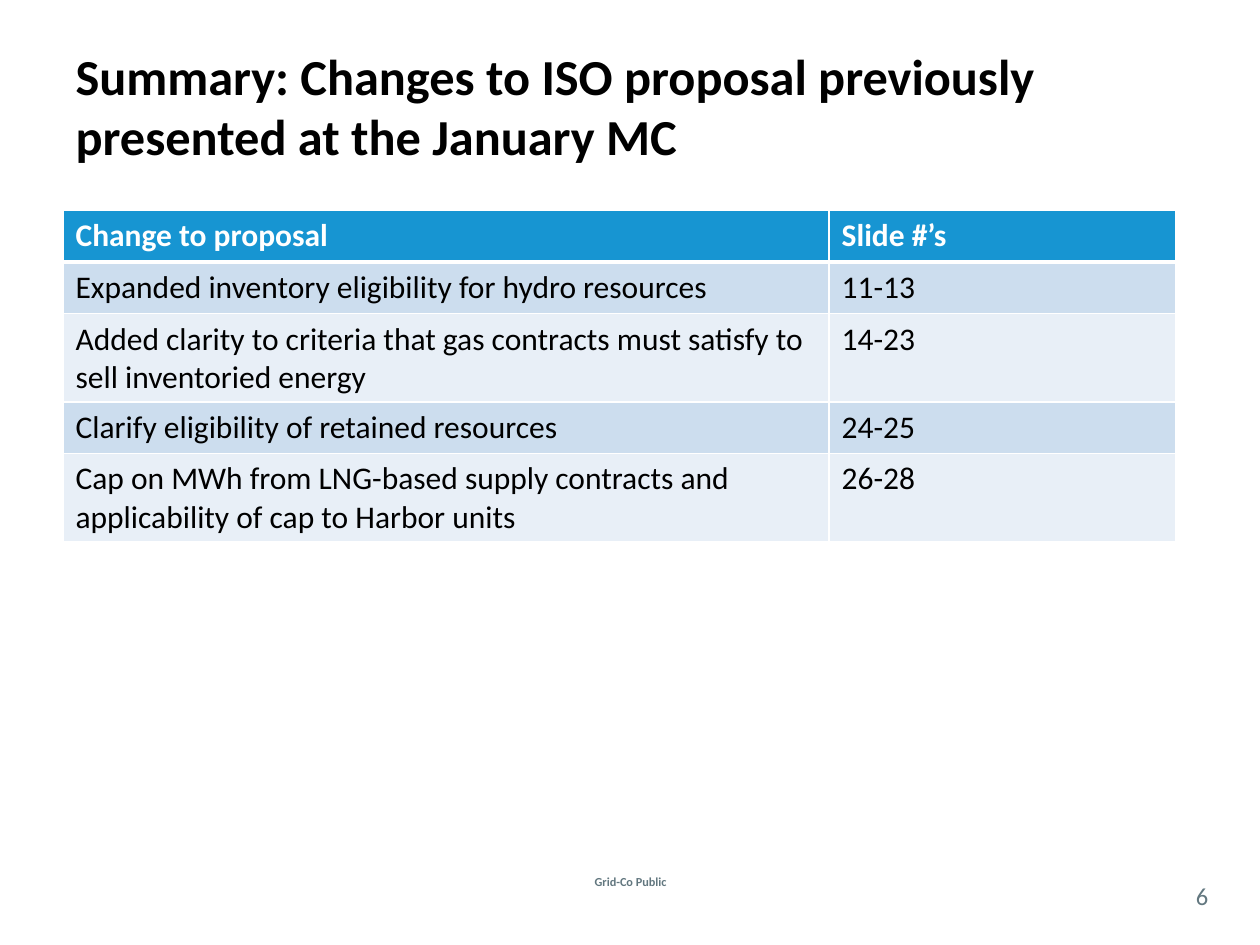
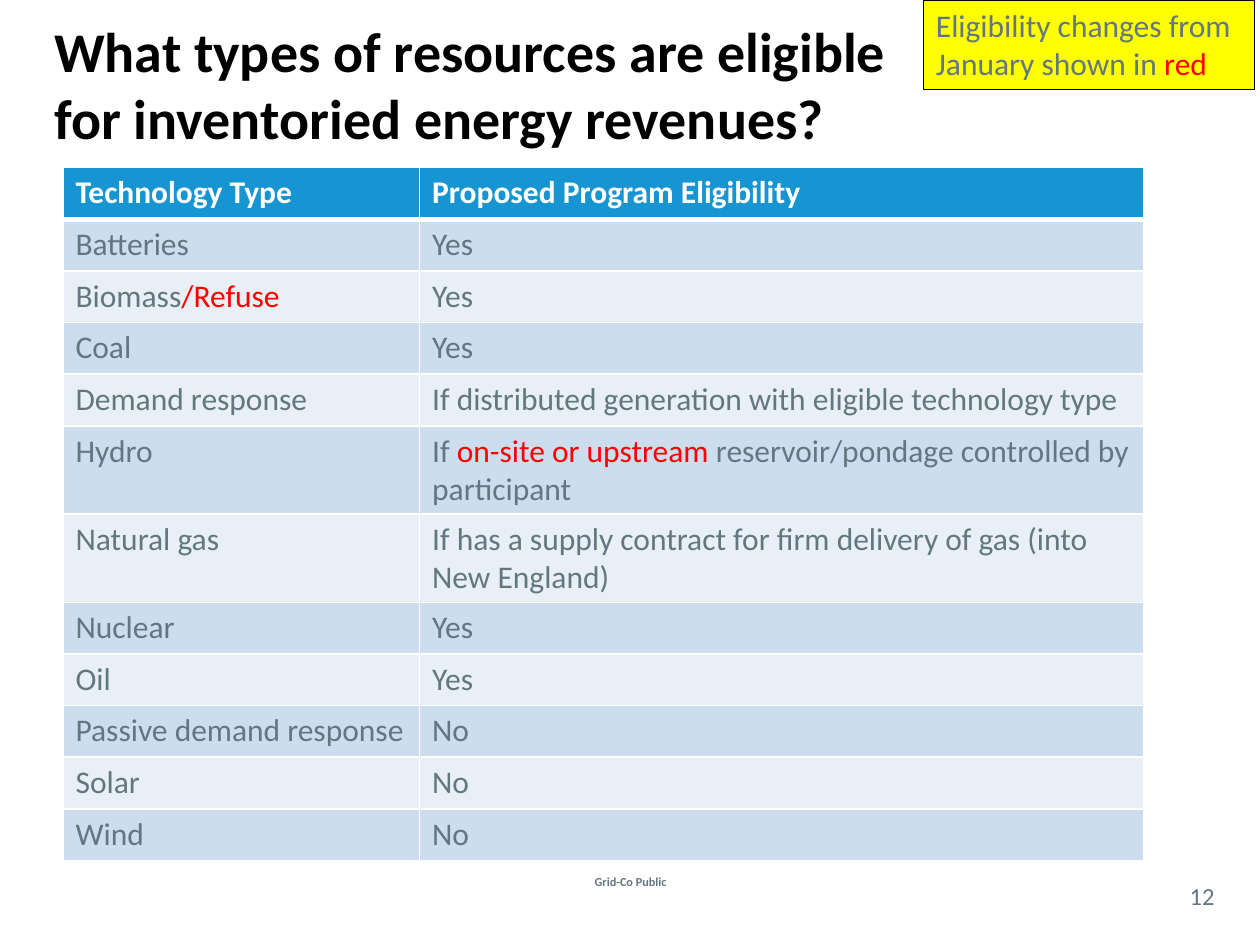
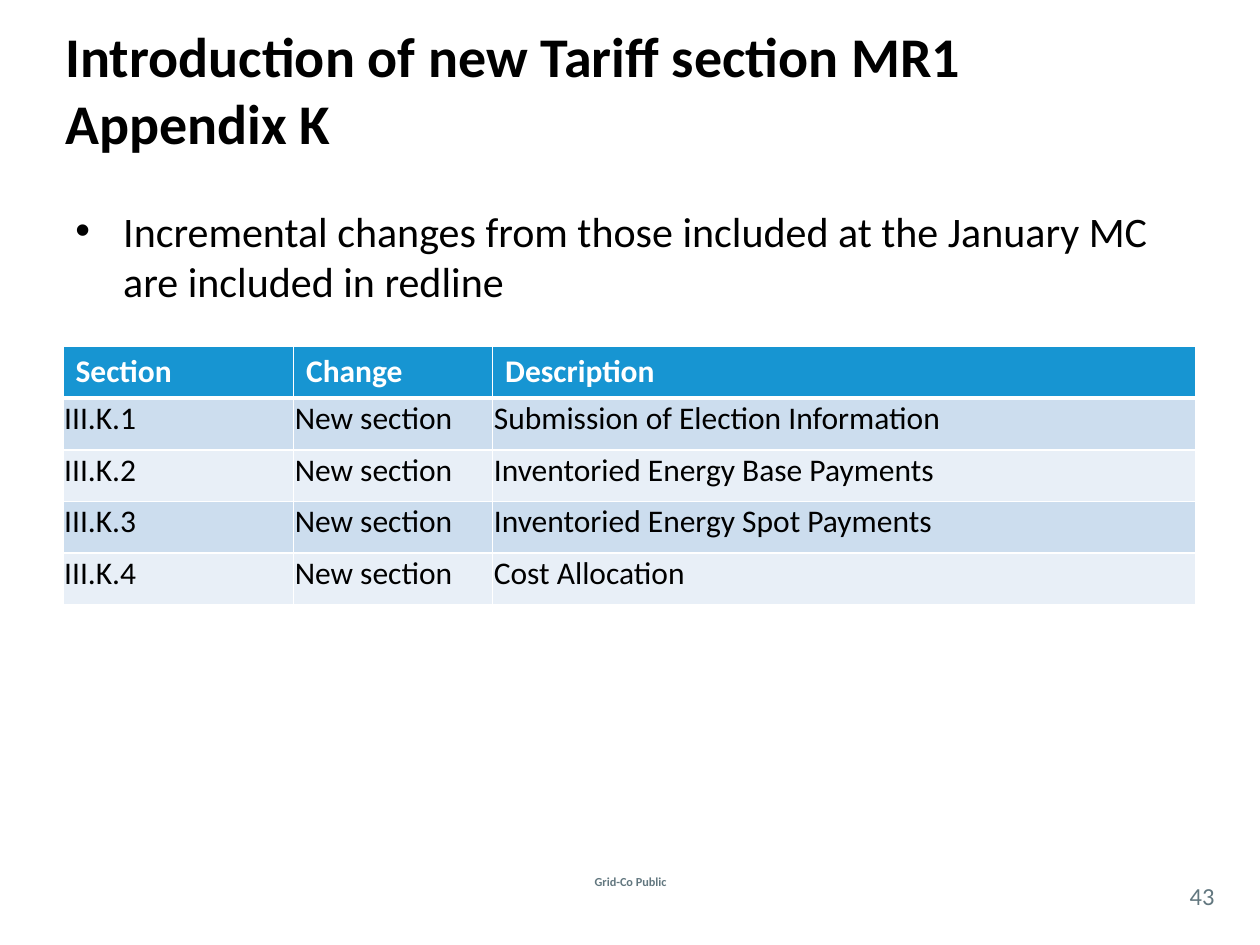
from pptx import Presentation
from pptx.dml.color import RGBColor
from pptx.enum.shapes import MSO_SHAPE
from pptx.enum.text import MSO_ANCHOR, MSO_AUTO_SIZE, PP_ALIGN
from pptx.oxml.ns import qn
from pptx.util import Inches, Pt
from lxml.etree import SubElement

COLORS = {
    "black": "000000",
    "white": "FFFFFF",
    "slate": "62777F",
    "red": "FF0000",
    "yellow": "FFFF00",
    "header": "1795D2",
    "odd": "CCDDEE",
    "even": "E8EFF7",
}
FONT = "Calibri"
FOOTER = "Grid-Co Public"
ROW_HEIGHT = 0.41

PROPOSAL_CHANGES = [
    ["Change to proposal", "Slide #’s"],
    ["Expanded inventory eligibility for hydro resources", "11-13"],
    ["Added clarity to criteria that gas contracts must satisfy to sell inventoried energy", "14-23"],
    ["Clarify eligibility of retained resources", "24-25"],
    ["Cap on MWh from LNG-based supply contracts and applicability of cap to Harbor units", "26-28"],
]
ELIGIBILITY = [
    ["Technology Type", "Proposed Program Eligibility"],
    ["Batteries", "Yes"],
    [["Biomass", ("/Refuse", "red")], "Yes"],
    ["Coal", "Yes"],
    ["Demand response", "If distributed generation with eligible technology type"],
    ["Hydro", ["If ", ("on-site or upstream ", "red"), "reservoir/pondage controlled by participant"]],
    ["Natural gas", "If has a supply contract for firm delivery of gas (into New England)"],
    ["Nuclear", "Yes"],
    ["Oil", "Yes"],
    ["Passive demand response", "No"],
    ["Solar", "No"],
    ["Wind", "No"],
]
TARIFF_SECTIONS = [
    ["Section", "Change", "Description"],
    ["III.K.1", "New section", "Submission of Election Information"],
    ["III.K.2", "New section", "Inventoried Energy Base Payments"],
    ["III.K.3", "New section", "Inventoried Energy Spot Payments"],
    ["III.K.4", "New section", "Cost Allocation"],
]


def rgb(name):
    """Return the named colour."""
    return RGBColor.from_string(COLORS[name])


def write_runs(paragraph, content, size, color, bold=False):
    """Add runs from a string or a list of strings and (text, colour) pairs."""
    for part in [content] if isinstance(content, str) else content:
        text, run_color = (part, color) if isinstance(part, str) else part
        run = paragraph.add_run()
        run.text = text
        run.font.name = FONT
        run.font.size = Pt(size)
        run.font.bold = bold
        run.font.color.rgb = rgb(run_color)


def add_title(slide, box, lines, size):
    """Place the title and write its lines."""
    title = slide.shapes.title
    title.left, title.top, title.width, title.height = map(Inches, box)
    frame = title.text_frame
    frame.word_wrap = True
    frame.auto_size = MSO_AUTO_SIZE.NONE
    frame.vertical_anchor = MSO_ANCHOR.MIDDLE
    heading = frame.paragraphs[0]
    heading.alignment = PP_ALIGN.LEFT
    for index, line in enumerate(lines):
        if index:
            heading.add_line_break()
        write_runs(heading, line, size, "black", True)


def add_text(slide, box, content, size, color, bold=False, anchor=MSO_ANCHOR.MIDDLE):
    """Add a wrapping text box and return its text frame."""
    frame = slide.shapes.add_textbox(*map(Inches, box)).text_frame
    frame.word_wrap = True
    frame.vertical_anchor = anchor
    write_runs(frame.paragraphs[0], content, size, color, bold)
    return frame


def add_footer(slide, number):
    """Add the classification line and the slide number."""
    label = add_text(slide, (4.27, 6.89, 1.47, 0.22), FOOTER, 7, "slate", True)
    page = add_text(slide, (9.33, 6.96, 0.42, 0.29), str(number), 14, "slate")
    page.margin_left = page.margin_right = page.margin_top = page.margin_bottom = 0
    for frame in (label, page):
        frame.paragraphs[0].alignment = PP_ALIGN.CENTER


def set_borders(cell, top, bottom):
    """Draw white cell borders, with given top and bottom widths in points."""
    properties = cell._tc.get_or_add_tcPr()
    for side, width in (("L", 1), ("R", 1), ("T", top), ("B", bottom)):
        border = SubElement(properties, qn(f"a:ln{side}"), w=str(Pt(width)))
        fill = SubElement(border, qn("a:solidFill"))
        SubElement(fill, qn("a:srgbClr"), val=COLORS["white"])


def add_grid(slide, left, top, widths, rows, color, tight=False):
    """Add a banded table with a blue header row."""
    grid = slide.shapes.add_table(
        len(rows), len(widths), Inches(left), Inches(top),
        Inches(sum(widths)), Inches(ROW_HEIGHT * len(rows))).table
    for column, width in zip(grid.columns, widths):
        column.width = Inches(width)
    for r, row in enumerate(rows):
        grid.rows[r].height = Inches(ROW_HEIGHT)
        header = r == 0
        band = "header" if header else "odd" if r % 2 else "even"
        for c, content in enumerate(row):
            cell = grid.cell(r, c)
            set_borders(cell, 3 if r == 1 else 1, 3 if header else 1)
            cell.fill.solid()
            cell.fill.fore_color.rgb = rgb(band)
            if tight and not header:
                cell.margin_left = cell.margin_right = cell.margin_top = Inches(0.01)
                cell.margin_bottom = 0
            write_runs(cell.text_frame.paragraphs[0], content, 18,
                       "white" if header else color, header)


def add_change_note(slide, box):
    """Add the yellow note explaining the red wording."""
    note = slide.shapes.add_shape(MSO_SHAPE.RECTANGLE, *map(Inches, box))
    note.shadow.inherit = False
    note.fill.solid()
    note.fill.fore_color.rgb = rgb("yellow")
    note.line.color.rgb = rgb("black")
    note.line.width = Pt(0.75)
    frame = note.text_frame
    frame.word_wrap = True
    frame.vertical_anchor = MSO_ANCHOR.TOP
    message = frame.paragraphs[0]
    message.alignment = PP_ALIGN.LEFT
    write_runs(message, ["Eligibility changes from January shown in ", ("red", "red")], 18, "slate")


def add_bullet(slide, box, content):
    """Add one bulleted statement with a hanging indent."""
    frame = add_text(slide, box, content, 24, "black", anchor=MSO_ANCHOR.TOP)
    properties = frame.paragraphs[0]._p.get_or_add_pPr()
    properties.set("marL", str(Inches(0.38)))
    properties.set("indent", str(-Inches(0.38)))
    SubElement(properties, qn("a:buFont"), typeface="Arial")
    SubElement(properties, qn("a:buChar"), char="•")


def start_slide(deck, number, title_box, title_lines, title_size):
    """Add a slide with its footer and title."""
    slide = deck.slides.add_slide(deck.slide_layouts[5])
    add_footer(slide, number)
    add_title(slide, title_box, title_lines, title_size)
    return slide


def build_summary(deck):
    """Build the summary of proposal changes."""
    slide = start_slide(deck, 6, (0.5, 0.42, 9, 0.83), [
        "Summary: Changes to ISO proposal previously presented at the January MC"], 28.8)
    add_grid(slide, 0.5, 1.67, (6.08, 2.75), PROPOSAL_CHANGES, "black")


def build_eligibility(deck):
    """Build the eligibility overview by technology."""
    slide = start_slide(deck, 12, (0.33, 0.08, 9.33, 1.17), [
        "What types of resources are eligible", "for inventoried energy revenues?"], 32)
    add_grid(slide, 0.5, 1.33, (2.83, 5.75), ELIGIBILITY, "slate")
    add_change_note(slide, (7.33, 0, 2.63, 0.71))


def build_tariff(deck):
    """Build the list of new tariff sections."""
    slide = start_slide(deck, 43, (0.42, 0.08, 9, 1.25), [
        "Introduction of new Tariff section MR1 Appendix K"], 32)
    add_grid(slide, 0.5, 2.75, (1.83, 1.58, 5.58), TARIFF_SECTIONS, "black", tight=True)
    add_bullet(slide, (0.5, 1.58, 8.83, 1.5),
               "Incremental changes from those included at the January MC are included in redline")


def main():
    """Build and save the presentation."""
    deck = Presentation()
    deck.slide_width = Inches(10)
    deck.slide_height = Inches(7.5)
    build_summary(deck)
    build_eligibility(deck)
    build_tariff(deck)
    deck.save("out.pptx")


if __name__ == "__main__":
    main()
